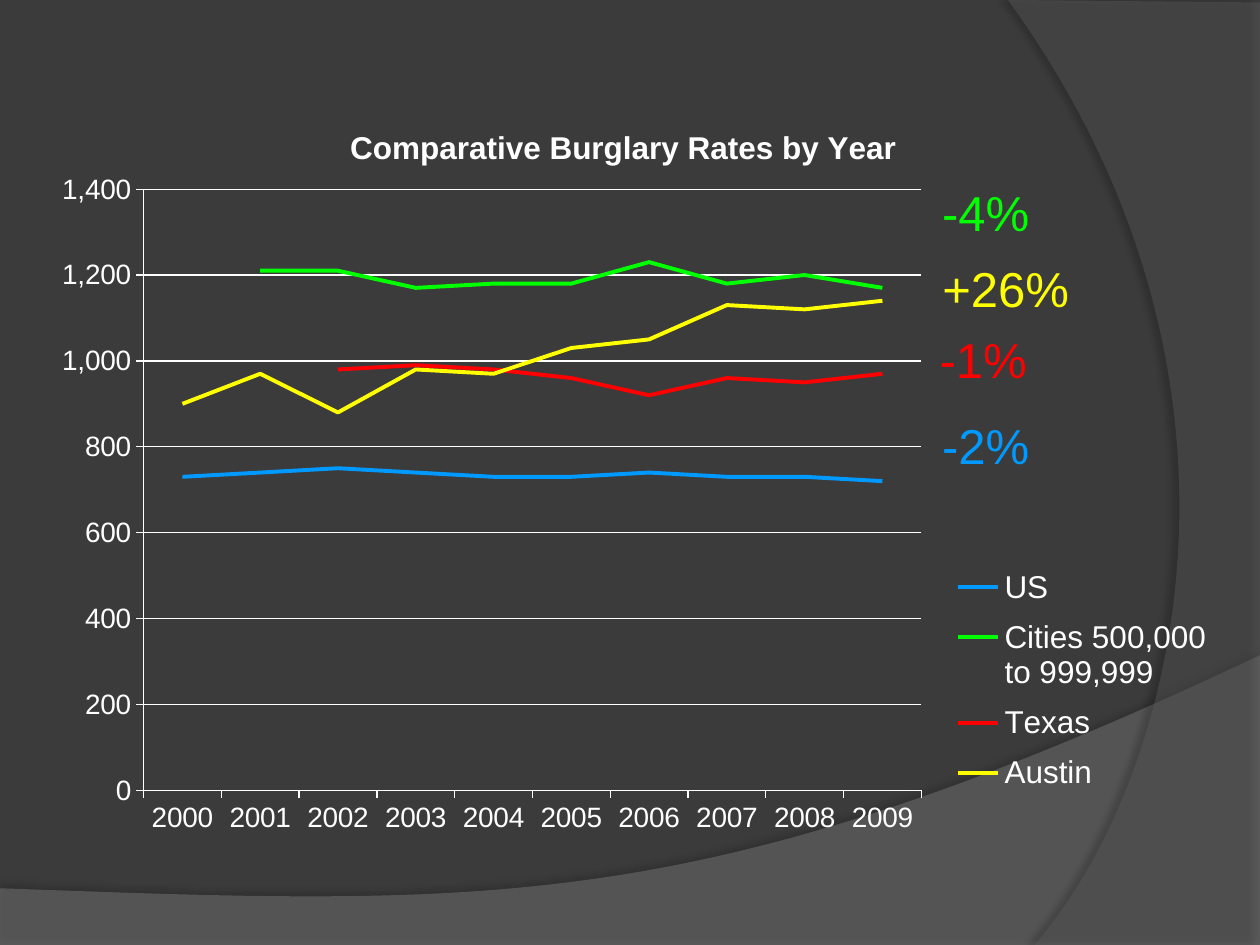
from dataclasses import dataclass

import pptx
import pptx.chart.data
import pptx.dml.color
import pptx.enum.chart
import pptx.enum.text
import pptx.oxml
import pptx.oxml.ns
import pptx.util
from pptx.util import Inches

RGBColor = pptx.dml.color.RGBColor
BACKGROUND = RGBColor(0x3B, 0x3B, 0x3B)
WAVE_GRAY = RGBColor(0x7F, 0x7F, 0x7F)
ARC_GRAY = RGBColor(0x5E, 0x5E, 0x5E)
WHITE = RGBColor(0xFF, 0xFF, 0xFF)
BLUE = RGBColor(0x00, 0x99, 0xFF)
GREEN = RGBColor(0x00, 0xFF, 0x00)
RED = RGBColor(0xFF, 0x00, 0x00)
YELLOW = RGBColor(0xFF, 0xFF, 0x00)
FONT = "Arial"
CURVE_STEPS = 60


@dataclass
class Backdrop:
    before: list
    curve: list
    after: list
    color: RGBColor
    opacity: int
    shadow_opacity: int
    shadow_blur: float
    shadow_distance: float
    shadow_angle: int


@dataclass
class Region:
    name: str
    rates: list
    color: RGBColor


@dataclass
class Change:
    text: str
    left: float
    top: float
    width: float
    color: RGBColor


BACKDROPS = [
    Backdrop([(0, 7.05), (0, 7.51), (10, 7.51)],
             [(10, 5.2), (5.59, 7.29), (3.91, 7.19), (0, 7.05)], [],
             WAVE_GRAY, 45, 35, 4, 3.5, 270),
    Backdrop([(10, 0.02), (10, 7.5)],
             [(8.21, 7.5), (9.35, 6.19), (10.18, 3), (8, 0)], [(10, 0.02)],
             ARC_GRAY, 40, 45, 4, 4, 180),
]
REGIONS = [
    Region("US", [730, 740, 750, 740, 730, 730, 740, 730, 730, 720], BLUE),
    Region("Cities 500,000 to 999,999",
           [None, 1210, 1210, 1170, 1180, 1180, 1230, 1180, 1200, 1170], GREEN),
    Region("Texas", [None, None, 980, 990, 980, 960, 920, 960, 950, 970], RED),
    Region("Austin", [900, 970, 880, 980, 970, 1030, 1050, 1130, 1120, 1140], YELLOW),
]
CHANGES = [
    Change("-1%", 7.36, 2.57, 0.9, RED),
    Change("-4%", 7.38, 1.4, 0.9, GREEN),
    Change("-2%", 7.38, 3.25, 0.9, BLUE),
    Change("+26%", 7.38, 2, 1.22, YELLOW),
]


def curve_points(controls: list) -> list:
    points = []
    for step in range(CURVE_STEPS + 1):
        t = step / CURVE_STEPS
        weights = ((1 - t) ** 3, 3 * t * (1 - t) ** 2, 3 * t ** 2 * (1 - t), t ** 3)
        points.append(tuple(sum(w * c[axis] for w, c in zip(weights, controls))
                            for axis in (0, 1)))
    return points


def draw_backdrop(slide, backdrop: Backdrop) -> None:
    outline = [(Inches(x), Inches(y)) for x, y in
               backdrop.before + curve_points(backdrop.curve) + backdrop.after]
    builder = slide.shapes.build_freeform(*outline[0])
    builder.add_line_segments(outline[1:], close=True)
    panel = builder.convert_to_shape()
    panel.fill.solid()
    panel.fill.fore_color.rgb = backdrop.color
    panel.line.fill.background()
    panel.shadow.inherit = False
    properties = panel._element.spPr
    color = properties.find(".//" + pptx.oxml.ns.qn("a:srgbClr"))
    color.append(pptx.oxml.parse_xml(
        f'<a:alpha {pptx.oxml.ns.nsdecls("a")} val="{backdrop.opacity * 1000}"/>'))
    properties.find(pptx.oxml.ns.qn("a:effectLst")).append(pptx.oxml.parse_xml(
        f'<a:outerShdw {pptx.oxml.ns.nsdecls("a")} '
        f'blurRad="{pptx.util.Pt(backdrop.shadow_blur)}" '
        f'dist="{pptx.util.Pt(backdrop.shadow_distance)}" '
        f'dir="{backdrop.shadow_angle * 60000}" rotWithShape="0">'
        f'<a:srgbClr val="000000"><a:alpha val="{backdrop.shadow_opacity * 1000}"/>'
        '</a:srgbClr></a:outerShdw>'))


def format_font(font, *, size: float, color: RGBColor, bold: bool = False) -> None:
    font.name = FONT
    font.size = pptx.util.Pt(size)
    font.bold = bold
    font.color.rgb = color


def write_text(frame, text: str, **style) -> None:
    run = frame.paragraphs[0].add_run()
    run.text = text
    format_font(run.font, **style)


def place_part(part, index: int, inner: bool = False, **fractions: float) -> None:
    for old in part.findall(pptx.oxml.ns.qn("c:layout")):
        part.remove(old)
    target = '<c:layoutTarget val="inner"/>' if inner else ""
    modes = "".join(f'<c:{key}Mode val="edge"/>' for key in ("x", "y"))
    values = "".join(f'<c:{key} val="{value}"/>' for key, value in fractions.items())
    part.insert(index, pptx.oxml.parse_xml(
        f'<c:layout {pptx.oxml.ns.nsdecls("c")}><c:manualLayout>'
        f'{target}{modes}{values}</c:manualLayout></c:layout>'))


def format_axis(axis) -> None:
    axis.major_tick_mark = pptx.enum.chart.XL_TICK_MARK.OUTSIDE
    axis.minor_tick_mark = pptx.enum.chart.XL_TICK_MARK.NONE
    axis.format.line.color.rgb = WHITE
    axis.format.line.width = pptx.util.Pt(0.75)
    format_font(axis.tick_labels.font, size=16, color=WHITE)


def draw_chart(slide, regions: list) -> None:
    data = pptx.chart.data.CategoryChartData(number_format="#,##0")
    data.categories = [str(year) for year in range(2000, 2010)]
    for region in regions:
        data.add_series(region.name, region.rates)
    chart = slide.shapes.add_chart(
        pptx.enum.chart.XL_CHART_TYPE.LINE, Inches(0.28), Inches(0.9),
        Inches(9.44), Inches(5.84), data).chart
    format_font(chart.font, size=10, color=WHITE)

    chart.has_title = True
    write_text(chart.chart_title.text_frame, "Comparative Burglary Rates by Year",
               size=18, color=WHITE, bold=True)
    chart.chart_title.include_in_layout = False
    place_part(chart.chart_title._element, 1, x=0.26, y=0.01)

    rates = chart.value_axis
    rates.minimum_scale, rates.maximum_scale, rates.major_unit = 0, 1400, 200
    rates.tick_labels.number_format = "#,##0"
    rates.tick_labels.number_format_is_linked = False
    rates.has_major_gridlines = True
    rates.major_gridlines.format.line.color.rgb = WHITE
    rates.major_gridlines.format.line.width = pptx.util.Pt(0.75)
    for axis in (chart.category_axis, rates):
        format_axis(axis)

    chart.has_legend = True
    chart.legend.position = pptx.enum.chart.XL_LEGEND_POSITION.RIGHT
    chart.legend.include_in_layout = False
    format_font(chart.legend.font, size=18, color=WHITE)
    place_part(chart.legend._element, 1, x=0.77, y=0.6, w=0.22, h=0.34)
    place_part(chart._chartSpace.chart.plotArea, 0, inner=True,
               x=0.091, y=0.103, w=0.654, h=0.817)

    plot = chart.plots[0]
    plot.vary_by_categories = False
    for line, region in zip(plot.series, regions):
        line.smooth = False
        line.marker.style = pptx.enum.chart.XL_MARKER_STYLE.NONE
        line.format.line.color.rgb = region.color
        line.format.line.width = pptx.util.Pt(2.25)


def draw_change(shapes, change: Change) -> None:
    label = shapes.add_textbox(Inches(change.left), Inches(change.top),
                               Inches(change.width), Inches(0.57))
    label.text_frame.word_wrap = False
    label.text_frame.auto_size = pptx.enum.text.MSO_AUTO_SIZE.SHAPE_TO_FIT_TEXT
    write_text(label.text_frame, change.text, size=28, color=change.color)


def main() -> None:
    deck = pptx.Presentation()
    deck.slide_width, deck.slide_height = Inches(10), Inches(7.5)
    slide = deck.slides.add_slide(deck.slide_layouts[6])
    slide.background.fill.solid()
    slide.background.fill.fore_color.rgb = BACKGROUND
    for backdrop in BACKDROPS:
        draw_backdrop(slide, backdrop)
    draw_chart(slide, REGIONS)
    changes = slide.shapes.add_group_shape()
    for change in CHANGES:
        draw_change(changes.shapes, change)
    deck.save("out.pptx")


if __name__ == "__main__":
    main()
